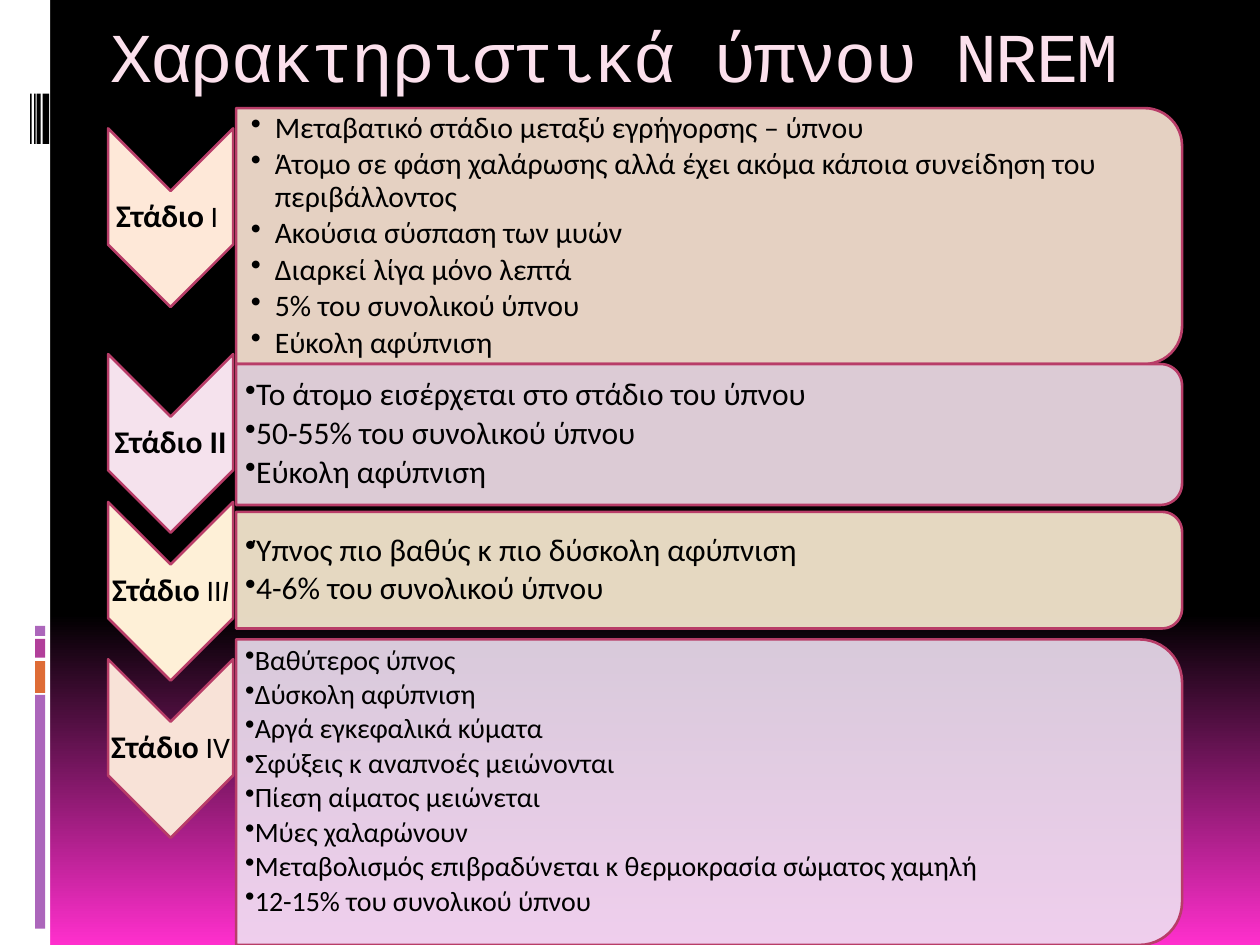
"""Build a slide on the four stages of NREM sleep."""
from copy import deepcopy
from math import cos, pi, sin

from lxml.etree import SubElement
from pptx import Presentation
from pptx.dml.color import RGBColor
from pptx.enum.shapes import MSO_SHAPE as Preset
from pptx.enum.text import MSO_ANCHOR as Anchor, PP_ALIGN as Align
from pptx.oxml.ns import qn
from pptx.util import Cm, Pt

COLORS = {
    "black": "000000", "white": "FFFFFF", "pink": "FF2FCD", "title": "FBE0EC",
    "border": "B83D68", "purple": "AC66BB", "orange": "DE6C36", "magenta": "B13F9A",
    "peach": "FEE8D8", "rose": "F5E2ED", "cream": "FEF0D7", "salmon": "F8E2D7",
    "lilac": "EEE0F1",
}
BOLD, PLAIN = {"size": 18, "bold": True}, {"size": 17}
STAGES = [
    {"label": [(" Ι ", PLAIN)], "arrow": "peach", "panel": "peach",
     "arrow_top": 2.59, "top": 2.18, "height": 5.16, "radius": 0.76,
     "size": 17, "hang": 0.48, "insets": (0.3, 0.25, 0.25, 0.25),
     "lines": ["Μεταβατικό στάδιο μεταξύ εγρήγορσης – ύπνου",
               "Άτομο σε φάση χαλάρωσης αλλά έχει ακόμα κάποια συνείδηση του περιβάλλοντος",
               "Ακούσια σύσπαση των μυών", "Διαρκεί λίγα μόνο λεπτά",
               "5% του συνολικού ύπνου", "Εύκολη αφύπνιση"]},
    {"label": [(" ΙΙ", BOLD)], "arrow": "rose", "panel": "rose",
     "arrow_top": 7.14, "top": 7.34, "height": 2.84, "radius": 0.43,
     "size": 18, "hang": 0.15, "insets": (0.18, 0.13, 0.13, 0.13),
     "lines": ["Το άτομο εισέρχεται στο στάδιο του ύπνου",
               "50-55% του συνολικού ύπνου", "Εύκολη αφύπνιση"]},
    {"label": [(" ΙΙ", PLAIN), ("Ι", {"size": 17, "italic": True})],
     "arrow": "cream", "panel": "cream",
     "arrow_top": 10.12, "top": 10.32, "height": 2.35, "radius": 0.4,
     "size": 18, "hang": 0.15, "insets": (0.18, 0.13, 0.13, 0.13),
     "lines": ["Ύπνος πιο βαθύς κ πιο δύσκολη αφύπνιση", "4-6% του συνολικού ύπνου"]},
    {"label": [(" ΙV", PLAIN)], "arrow": "salmon", "panel": "lilac",
     "arrow_top": 13.29, "top": 12.89, "height": 6.16, "radius": 0.86,
     "size": 16, "hang": 0.15, "insets": (0.18, 0.23, 0.23, 0.66),
     "lines": ["Βαθύτερος ύπνος", "Δύσκολη αφύπνιση", "Αργά εγκεφαλικά κύματα",
               "Σφύξεις κ αναπνοές μειώνονται", "Πίεση αίματος μειώνεται",
               "Μύες χαλαρώνουν",
               "Μεταβολισμός επιβραδύνεται κ θερμοκρασία σώματος χαμηλή",
               "12-15% του συνολικού ύπνου"]},
]


def rgb(name):
    """Return the named colour."""
    return RGBColor.from_string(COLORS[name])


def add_text(para, text, size=18, color="black", font="Calibri", bold=False,
             italic=False, spacing=None):
    """Append one formatted span to a paragraph."""
    span = para.add_run()
    span.text = text
    span.font.size, span.font.name = Pt(size), font
    span.font.bold, span.font.italic = bold, italic
    span.font.color.rgb = rgb(color)
    if spacing is not None:
        span.font._element.set("spc", str(round(spacing * 100)))


def set_frame(shape, insets):
    """Wrap and centre the text vertically, with left, top, right, bottom insets."""
    frame = shape.text_frame
    frame.word_wrap = True
    frame.vertical_anchor = Anchor.MIDDLE
    (frame.margin_left, frame.margin_top,
     frame.margin_right, frame.margin_bottom) = map(Cm, insets)
    return frame


def add_bar(page, left, top, width, height, color):
    """Add a plain rectangle without an outline."""
    bar = page.shapes.add_shape(Preset.RECTANGLE, Cm(left), Cm(top), Cm(width), Cm(height))
    bar.shadow.inherit = False
    bar.fill.solid()
    bar.fill.fore_color.rgb = rgb(color)
    bar.line.fill.background()


def add_outline(page, points, color, opacity=100):
    """Add a closed bordered polygon through points given in centimetres."""
    start, *rest = [(Cm(x), Cm(y)) for x, y in points]
    builder = page.shapes.build_freeform(*start)
    builder.add_line_segments(rest, close=True)
    shape = builder.convert_to_shape()
    shape.shadow.inherit = False
    shape.fill.solid()
    shape.fill.fore_color.rgb = rgb(color)
    shape.line.color.rgb = rgb("border")
    shape.line.width = Pt(1.5)
    if opacity < 100:
        tint = shape.element.find(".//" + qn("a:srgbClr"))
        SubElement(tint, qn("a:alpha")).set("val", str(opacity * 1000))
    return shape


def add_backdrop(page):
    """Fade the background from black to pink at the bottom."""
    fill = page.background.fill
    fill.gradient()
    fill.gradient_angle = 270
    for stop, position, color in zip(fill.gradient_stops, (0.65, 1), ("black", "pink")):
        stop.position = position
        stop.color.rgb = rgb(color)
    stops = page.element.find(".//" + qn("a:gsLst"))
    first = deepcopy(stops[0])
    first.set("pos", "0")
    stops.insert(0, first)


def add_side_strip(page, left, top, width, height):
    """Draw the white strip with its coloured blocks and black stripes."""
    add_bar(page, left, top, width, height, "white")
    for offset, length, color in ((14.01, 4.71, "purple"), (13.33, 0.64, "orange"),
                                  (12.88, 0.38, "magenta"), (12.62, 0.2, "purple")):
        add_bar(page, left + 0.71, top + offset, 0.2, length, color)
    for offset, thickness in ((0.86, 0.13), (0.74, 0.08), (0.69, 0.03), (0.61, 0.03)):
        add_bar(page, left + offset, top + 1.89, thickness, 1.01, "black")


def add_title(page, left, top, width, height):
    """Place the slide title."""
    box = page.shapes.add_textbox(Cm(left), Cm(top), Cm(width), Cm(height))
    para = set_frame(box, (0.25, 0.13, 0.25, 0.13)).paragraphs[0]
    add_text(para, "Χαρακτηριστικά ύπνου NREM", size=40, color="title",
             font="Courier New", spacing=-1)


def add_arrow(page, stage, left, top, width, height):
    """Draw a downward chevron carrying the stage name."""
    middle, notch = left + width / 2, width / 2
    right, bottom = left + width, top + height
    points = [(right, top), (right, bottom - notch), (middle, bottom),
              (left, bottom - notch), (left, top), (middle, top + notch)]
    shape = add_outline(page, points, stage["arrow"])
    para = set_frame(shape, (0.03, notch, 0.03, notch)).paragraphs[0]
    para.alignment = Align.CENTER
    para.line_spacing = 0.9
    for text, style in [("Στάδιο", BOLD)] + stage["label"]:
        add_text(para, text, **style)


def add_panel(page, stage, left, top, width, height):
    """Draw a panel rounded on its right side with the bulleted stage traits."""
    radius, steps = stage["radius"], 12
    right, bottom = left + width, top + height
    angles = [pi / 2 * step / steps for step in range(steps + 1)]
    points = [(left, top)]
    points += [(right - radius * (1 - sin(a)), top + radius * (1 - cos(a))) for a in angles]
    points += [(right - radius * (1 - cos(a)), bottom - radius * (1 - sin(a))) for a in angles]
    points.append((left, bottom))
    frame = set_frame(add_outline(page, points, stage["panel"], opacity=90), stage["insets"])
    for index, line in enumerate(stage["lines"]):
        para = frame.add_paragraph() if index else frame.paragraphs[0]
        para.alignment = Align.LEFT
        para.line_spacing = 0.9
        para.space_after = Pt(round(stage["size"] * 0.15, 1))
        layout = para._p.get_or_add_pPr()
        layout.set("marL", str(Cm(stage["hang"])))
        layout.set("indent", str(-Cm(stage["hang"])))
        SubElement(layout, qn("a:buChar")).set("char", "•")
        add_text(para, line, size=stage["size"])


def main():
    """Assemble and save the slide."""
    deck = Presentation()
    deck.slide_width, deck.slide_height = Cm(25.4), Cm(19.05)
    page = deck.slides.add_slide(deck.slide_layouts[6])
    add_backdrop(page)
    add_side_strip(page, 0, 0, 1.01, 19.05)
    add_title(page, 1.98, 0, 21.59, 2.18)
    for stage in STAGES:
        add_arrow(page, stage, 2.18, stage["arrow_top"], 2.52, 3.6)
        add_panel(page, stage, 4.76, stage["top"], 19.07, stage["height"])
    deck.save("out.pptx")


if __name__ == "__main__":
    main()
